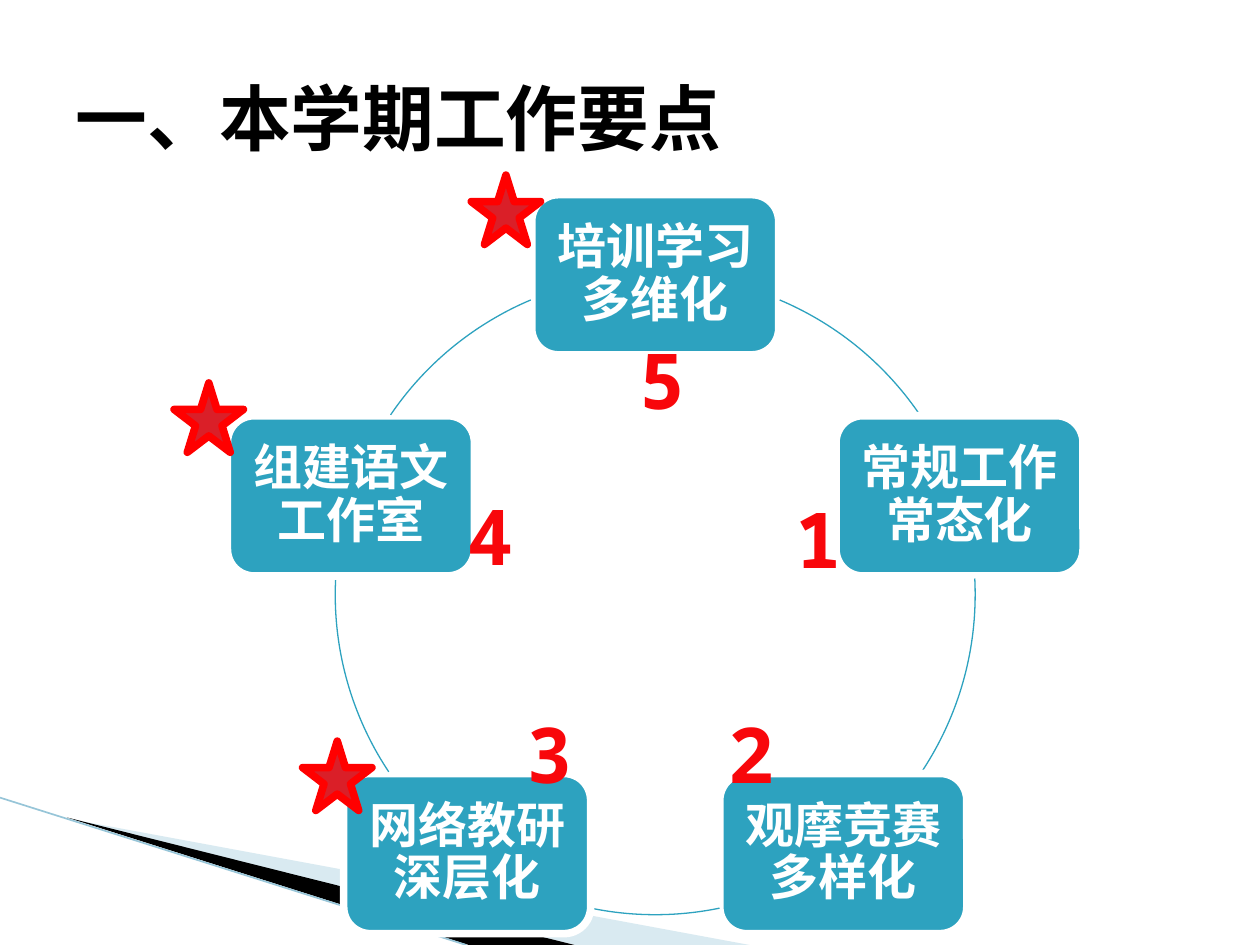
import math

from lxml import etree
from pptx import Presentation
from pptx.dml.color import RGBColor
from pptx.enum.shapes import MSO_CONNECTOR, MSO_SHAPE
from pptx.enum.text import MSO_ANCHOR, PP_ALIGN
from pptx.oxml.ns import qn
from pptx.util import Cm, Pt

LEFT, CENTER = PP_ALIGN.LEFT, PP_ALIGN.CENTER
MIDDLE, TOP = MSO_ANCHOR.MIDDLE, MSO_ANCHOR.TOP
ROUNDED, STAR, ARC = MSO_SHAPE.ROUNDED_RECTANGLE, MSO_SHAPE.STAR_5_POINT, MSO_SHAPE.ARC
STRAIGHT = MSO_CONNECTOR.STRAIGHT

FONT = "Noto Sans Mono"
COLORS = {
    name: RGBColor.from_string(value)
    for name, value in {
        "white": "FFFFFF", "black": "000000", "teal": "2DA2BF", "pale": "A0CBDC",
        "edge": "97C5D8", "star": "DA1F28", "red": "FF0000", "number": "F8070B",
    }.items()
}


def write_text(shape, text, size, color, align=CENTER, anchor=MIDDLE, spacing=1.0,
               wrap=True, inset=None):
    frame = shape.text_frame
    frame.word_wrap = wrap
    frame.vertical_anchor = anchor
    if inset is not None:
        frame.margin_left = frame.margin_right = Cm(inset)
        frame.margin_top = frame.margin_bottom = Cm(inset)
    para = frame.paragraphs[0]
    para.alignment = align
    para.line_spacing = spacing
    span = para.add_run()
    span.text = text
    span.font.name = FONT
    span.font.size = Pt(size)
    span.font.bold = True
    span.font.color.rgb = COLORS[color]
    east_asian = etree.SubElement(span.font._element, qn("a:ea"))
    east_asian.set("typeface", FONT)


def style_shape(shape, fill=None, line=None, width=0.75):
    shape.shadow.inherit = False
    if fill:
        shape.fill.solid()
        shape.fill.fore_color.rgb = COLORS[fill]
    else:
        shape.fill.background()
    if line:
        shape.line.color.rgb = COLORS[line]
        shape.line.width = Pt(width)
    else:
        shape.line.fill.background()


deck = Presentation()
deck.slide_width, deck.slide_height = Cm(25.4), Cm(19.05)
page = deck.slides.add_slide(deck.slide_layouts[5])
shapes = page.shapes

# Corner decoration
wedges = [
    ("pale", 40, [(1.4, 16.51), (15.11, 19.05), (11.58, 19.05)]),
    ("black", 100, [(1.35, 16.48), (11.58, 19.05), (9.45, 19.05)]),
]
for color, opacity, corners in wedges:
    points = [(Cm(x), Cm(y)) for x, y in corners]
    builder = shapes.build_freeform(*points[0])
    builder.add_line_segments(points[1:], close=True)
    wedge = builder.convert_to_shape()
    style_shape(wedge, fill=color)
    if opacity < 100:
        fill_color = wedge.fill._xPr.find(qn("a:solidFill"))[0]
        etree.SubElement(fill_color, qn("a:alpha")).set("val", str(opacity * 1000))

edge = shapes.add_connector(STRAIGHT, 0, Cm(16.08), Cm(9.4), Cm(19.05))
edge.line.color.rgb = COLORS["edge"]
edge.line.width = Pt(0.95)
etree.SubElement(edge._element.spPr, qn("a:effectLst"))

# Cycle of five topics, clockwise from the top
CENTER_X, CENTER_Y, RADIUS = 13.21, 11.99, 6.45
BOX_WIDTH, BOX_HEIGHT = 4.98, 3.23
topics = [  # text, start and end angle of the arc that follows
    ("培训学习多维化", 292.9, 325.8),
    ("常规工作常态化", 357.1, 33.6),
    ("观摩竞赛多样化", 78.4, 101.6),
    ("网络教研深层化", 146.4, 182.9),
    ("组建语文工作室", 214.2, 247.1),
]
for index, (text, start, end) in enumerate(topics):
    angle = math.radians(index * 360 / len(topics) - 90)
    left = CENTER_X + RADIUS * math.cos(angle) - BOX_WIDTH / 2
    top = CENTER_Y + RADIUS * math.sin(angle) - BOX_HEIGHT / 2
    box = shapes.add_shape(ROUNDED, Cm(left), Cm(top), Cm(BOX_WIDTH), Cm(BOX_HEIGHT))
    style_shape(box, fill="teal", line="white", width=4.33)
    write_text(box, text, size=28, color="white", spacing=0.9, inset=0.3)

    arc = shapes.add_shape(ARC, Cm(CENTER_X - RADIUS), Cm(CENTER_Y - RADIUS),
                           Cm(2 * RADIUS), Cm(2 * RADIUS))
    # Adjustments count in 100000ths, angles in 60000ths of a degree
    arc.adjustments[0], arc.adjustments[1] = start * 0.6, end * 0.6
    style_shape(arc, line="teal")

title = shapes.title
title.left, title.top, title.width, title.height = Cm(1.27), Cm(0.76), Cm(22.86), Cm(3.18)
write_text(title, "一、本学期工作要点", size=41, color="black", align=LEFT)

for left, top in [(9.5, 3.53), (3.51, 7.72), (6.1, 14.94)]:
    star = shapes.add_shape(STAR, Cm(left), Cm(top), Cm(1.4), Cm(1.4))
    style_shape(star, fill="star", line="red", width=4.33)

number_places = [(15.75, 9.78), (14.4, 14.12), (10.34, 14.12), (9.14, 9.73), (12.6, 6.58)]
for number, (left, top) in enumerate(number_places, start=1):
    label = shapes.add_textbox(Cm(left), Cm(top), Cm(1.5), Cm(2.13))
    write_text(label, str(number), size=44, color="number", anchor=TOP, wrap=False)

deck.save("out.pptx")
